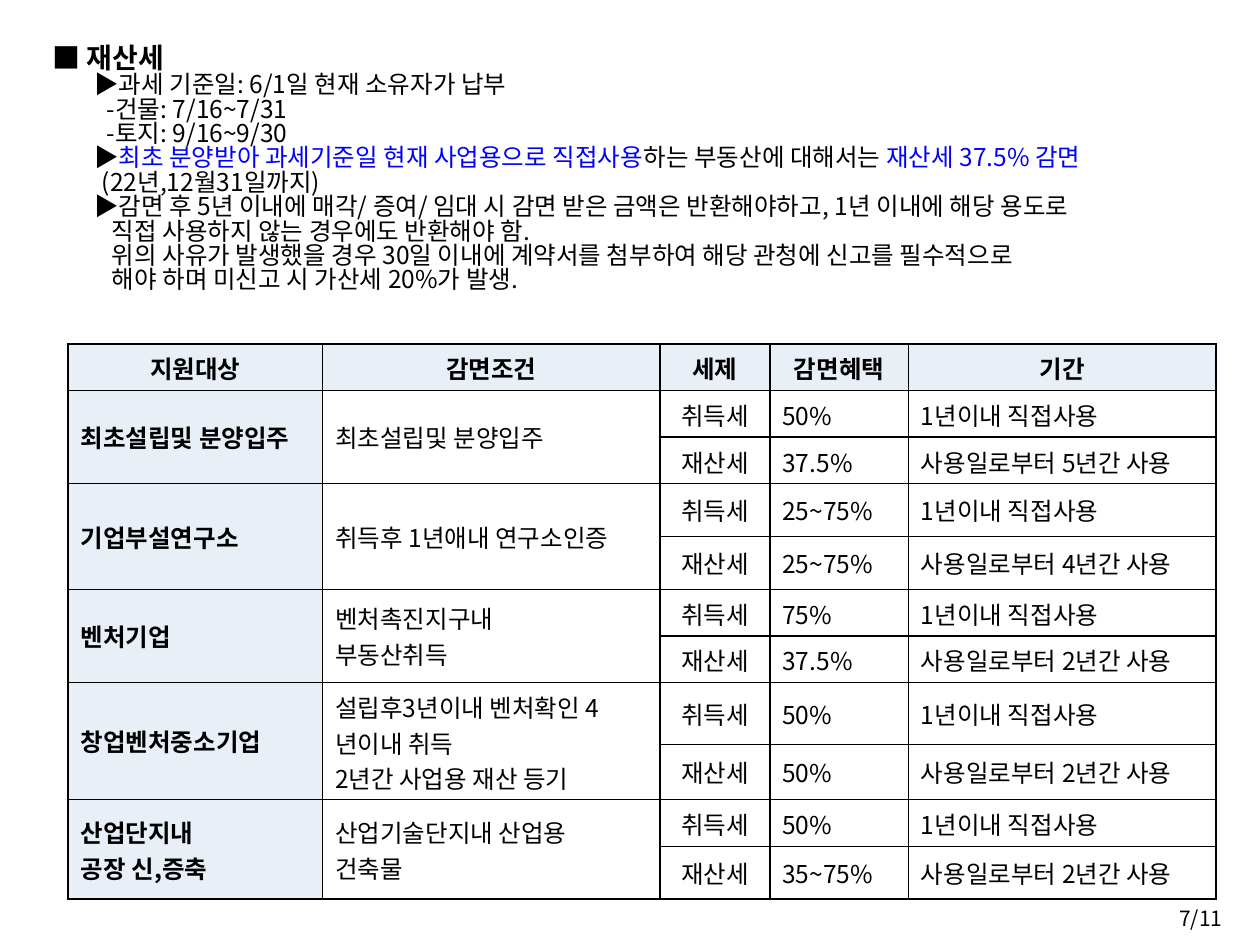
from dataclasses import dataclass

from lxml.etree import SubElement
from pptx import Presentation
from pptx.dml.color import RGBColor
from pptx.enum.text import MSO_ANCHOR, PP_ALIGN
from pptx.oxml.ns import qn
from pptx.util import Inches, Pt


@dataclass(frozen=True)
class Theme:
    font: str = "Noto Sans CJK KR"
    ink: str = "000000"
    accent: str = "0000FF"
    shade: str = "E8EFF7"
    heading: int = 16
    body: int = 14
    footer: int = 12
    line_spacing: float = 0.83
    border: float = 1


class SlideBuilder:
    def __init__(self, page, theme):
        self.page = page
        self.theme = theme

    def style(self, paragraph, size, bold=False, align=PP_ALIGN.LEFT):
        paragraph.alignment = align
        font = paragraph.font
        font.name = self.theme.font
        font.size = Pt(size)
        font.bold = bold
        font.color.rgb = RGBColor.from_string(self.theme.ink)
        east_asian = SubElement(font._element, qn("a:ea"))
        east_asian.set("typeface", self.theme.font)

    def text_box(self, left, top, width, height, anchor=MSO_ANCHOR.TOP):
        box = self.page.shapes.add_textbox(
            Inches(left), Inches(top), Inches(width), Inches(height))
        frame = box.text_frame
        frame.word_wrap = True
        frame.vertical_anchor = anchor
        return frame

    def outline(self, frame, lines):
        for index, (indent, spans) in enumerate(lines):
            paragraph = frame.paragraphs[0] if index == 0 else frame.add_paragraph()
            paragraph.line_spacing = self.theme.line_spacing
            paragraph._p.get_or_add_pPr().set("marL", str(Inches(indent)))
            size = self.theme.heading if index == 0 else self.theme.body
            self.style(paragraph, size, bold=index == 0)
            for text, color in spans:
                span = paragraph.add_run()
                span.text = text
                if color != self.theme.ink:
                    span.font.color.rgb = RGBColor.from_string(color)

    def page_number(self, text, left, top, width, height):
        paragraph = self.text_box(left, top, width, height).paragraphs[0]
        paragraph.text = text
        self.style(paragraph, self.theme.footer, align=PP_ALIGN.RIGHT)

    def table(self, left, top, widths, heights):
        grid = self.page.shapes.add_table(
            len(heights), len(widths), Inches(left), Inches(top),
            Inches(sum(widths)), Inches(sum(heights))).table
        for column, width in zip(grid.columns, widths):
            column.width = Inches(width)
        for row, height in zip(grid.rows, heights):
            row.height = Inches(height)
        for cell in grid.iter_cells():
            self.borders(cell)
        return grid

    def borders(self, cell):
        properties = cell._tc.get_or_add_tcPr()
        for side in ("lnL", "lnR", "lnT", "lnB"):
            line = SubElement(properties, qn(f"a:{side}"), w=str(Pt(self.theme.border)))
            fill = SubElement(line, qn("a:solidFill"))
            SubElement(fill, qn("a:srgbClr"), val=self.theme.ink)

    def cell(self, cell, text, bold=False, shaded=False, align=PP_ALIGN.LEFT):
        cell.text = text
        cell.vertical_anchor = MSO_ANCHOR.MIDDLE
        if shaded:
            cell.fill.solid()
            cell.fill.fore_color.rgb = RGBColor.from_string(self.theme.shade)
        else:
            cell.fill.background()
        for paragraph in cell.text_frame.paragraphs:
            self.style(paragraph, self.theme.body, bold, align)


THEME = Theme()
ARROW, DASH, NOTE, CONTINUED = 0.33, 0.43, 0.39, 0.47


def plain(indent, text):
    return indent, [(text, THEME.ink)]


OUTLINE = [
    plain(0, "■ 재산세"),
    plain(ARROW, "▶과세 기준일: 6/1일 현재 소유자가 납부"),
    plain(DASH, "-건물: 7/16~7/31"),
    plain(DASH, "-토지: 9/16~9/30"),
    (ARROW, [
        ("▶", THEME.ink),
        ("최초 분양받아 과세기준일 현재 사업용으로 직접사용", THEME.accent),
        ("하는 부동산에 대해서는 ", THEME.ink),
        ("재산세 37.5% 감면", THEME.accent),
    ]),
    plain(NOTE, "(22년,12월31일까지)"),
    plain(ARROW, "▶감면 후 5년 이내에 매각/ 증여/ 임대 시 감면 받은 금액은 "
                 "반환해야하고, 1년 이내에 해당 용도로"),
    plain(CONTINUED, "직접 사용하지 않는 경우에도 반환해야 함."),
    plain(CONTINUED, "위의 사유가 발생했을 경우 30일 이내에 계약서를 첨부하여 "
                     "해당 관청에 신고를 필수적으로"),
    plain(CONTINUED, "해야 하며 미신고 시 가산세 20%가 발생."),
]

HEADERS = ["지원대상", "감면조건", "세제", "감면혜택", "기간"]
SUPPORTS = [
    ("최초설립및 분양입주", "최초설립및 분양입주", "50%", "37.5%", 5),
    ("기업부설연구소", "취득후 1년애내 연구소인증", "25~75%", "25~75%", 4),
    ("벤처기업", "벤처촉진지구내\n부동산취득", "75%", "37.5%", 2),
    ("창업벤처중소기업", "설립후3년이내 벤처확인 4년이내 취득\n2년간 사업용 재산 등기",
     "50%", "50%", 2),
    ("산업단지내\n공장 신,증축", "산업기술단지내 산업용\n건축물", "50%", "35~75%", 2),
]
COLUMN_WIDTHS = [2.02, 2.68, 0.87, 1.1, 2.44]
ROW_HEIGHTS = [0.37, 0.37, 0.37, 0.42, 0.42, 0.37, 0.37, 0.49, 0.44, 0.37, 0.42]


def main():
    deck = Presentation()
    deck.slide_width, deck.slide_height = Inches(10), Inches(7.5)
    builder = SlideBuilder(deck.slides.add_slide(deck.slide_layouts[6]), THEME)

    builder.outline(builder.text_box(0.32, 0.13, 9.37, 2.44, MSO_ANCHOR.MIDDLE), OUTLINE)
    builder.page_number("7/11", 9.25, 7.14, 0.55, 0.29)

    grid = builder.table(0.54, 2.73, COLUMN_WIDTHS, ROW_HEIGHTS)
    for column, header in enumerate(HEADERS):
        builder.cell(grid.cell(0, column), header, True, True, PP_ALIGN.CENTER)
    for index, (target, condition, acquisition, holding, years) in enumerate(SUPPORTS):
        first = 1 + 2 * index
        for column in (0, 1):
            grid.cell(first, column).merge(grid.cell(first + 1, column))
        builder.cell(grid.cell(first, 0), target, bold=True, shaded=True)
        builder.cell(grid.cell(first, 1), condition)
        taxes = [("취득세", acquisition, "1년이내 직접사용"),
                 ("재산세", holding, f"사용일로부터 {years}년간 사용")]
        for row, (tax, benefit, period) in enumerate(taxes, first):
            builder.cell(grid.cell(row, 2), tax, align=PP_ALIGN.CENTER)
            builder.cell(grid.cell(row, 3), benefit)
            builder.cell(grid.cell(row, 4), period)

    deck.save("out.pptx")


if __name__ == "__main__":
    main()
